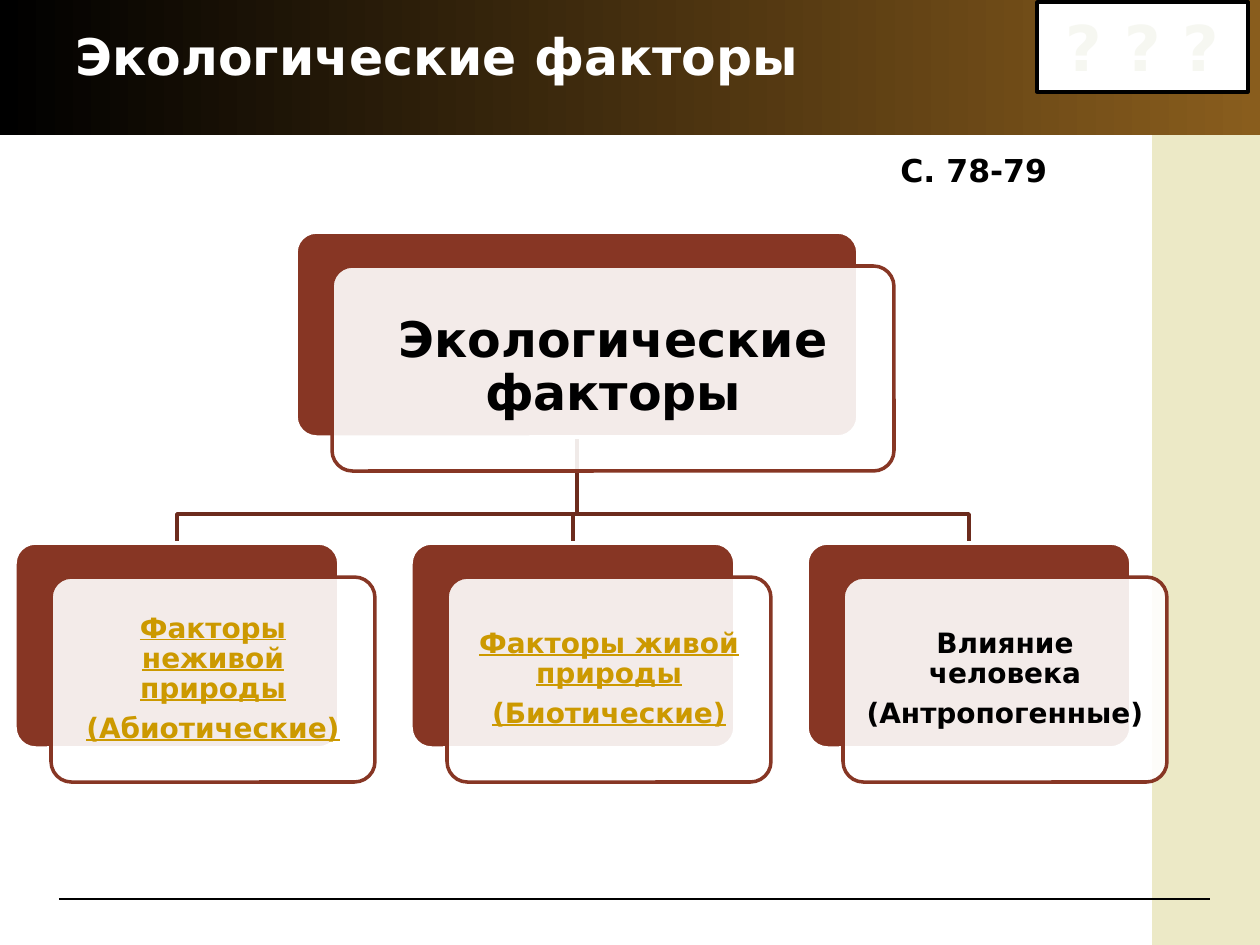
from dataclasses import dataclass

from lxml import etree
from pptx import Presentation
from pptx.dml.color import RGBColor
from pptx.enum.shapes import MSO_CONNECTOR, MSO_SHAPE
from pptx.enum.text import MSO_ANCHOR, PP_ALIGN
from pptx.oxml.ns import qn
from pptx.util import Emu, Pt

PX = 914400 / 126
RECT = MSO_SHAPE.RECTANGLE
ROUNDED = MSO_SHAPE.ROUNDED_RECTANGLE
STRAIGHT = MSO_CONNECTOR.STRAIGHT
CENTER, LEFT = PP_ALIGN.CENTER, PP_ALIGN.LEFT
MIDDLE, TOP = MSO_ANCHOR.MIDDLE, MSO_ANCHOR.TOP

COLORS = {
    "black": "000000",
    "white": "FFFFFF",
    "sand": "ECE9C6",
    "bronze": "895D1D",
    "brick": "873624",
    "branch": "6C2B1D",
    "gold": "CC9900",
    "pale": "F6F7F1",
}
SHADOW_OFFSET = (36, 34)
TRUNK_X, FORK_Y = 577, 514
CHILD_LEFT, CHILD_TOP, CHILD_STEP = 15, 543, 396
CARD_HEIGHT = 205


@dataclass(frozen=True)
class Box:
    left: int
    top: int
    width: int
    height: int

    def emu(self) -> list[Emu]:
        return [px(n) for n in (self.left, self.top, self.width, self.height)]


@dataclass(frozen=True)
class Factor:
    box: Box
    lines: tuple[str, ...]
    size: int
    inset: int
    color: str = "black"
    underline: bool = False


def px(length: int) -> Emu:
    return Emu(round(length * PX))


def rgb(name: str) -> RGBColor:
    return RGBColor.from_string(COLORS[name])


def add_panel(shapes, kind, box: Box, fill: str, line: str | None = None):
    panel = shapes.add_shape(kind, *box.emu())
    panel.shadow.inherit = False
    panel.fill.solid()
    panel.fill.fore_color.rgb = rgb(fill)
    if line:
        panel.line.color.rgb = rgb(line)
        panel.line.width = Pt(2)
    else:
        panel.line.fill.background()
    return panel


def write(frame, lines: tuple[str, ...], size: float, color: str,
          align=CENTER, anchor=MIDDLE, underline: bool = False) -> None:
    frame.word_wrap = True
    frame.vertical_anchor = anchor
    frame.text = "\n".join(lines)
    style = {"name": "DejaVu Sans", "size": Pt(size), "bold": True,
             "underline": underline}
    for paragraph in frame.paragraphs:
        paragraph.alignment = align
        for run in paragraph.runs:
            for attribute, value in style.items():
                setattr(run.font, attribute, value)
            run.font.color.rgb = rgb(color)


def add_factor(shapes, factor: Factor) -> None:
    box = factor.box
    dx, dy = SHADOW_OFFSET
    front = Box(box.left + dx, box.top + dy, box.width, box.height)
    backing = add_panel(shapes, ROUNDED, box, "brick", "white")
    card = add_panel(shapes, ROUNDED, front, "white", "brick")
    for panel in (backing, card):
        panel.adjustments[0] = 0.1
    tint = card.fill._xPr.find(qn("a:solidFill"))[0]
    etree.SubElement(tint, qn("a:alpha"), val="90000")
    frame = card.text_frame
    for side in ("left", "top", "right", "bottom"):
        setattr(frame, f"margin_{side}", px(factor.inset))
    write(frame, factor.lines, factor.size, factor.color,
          underline=factor.underline)
    for paragraph in frame.paragraphs:
        paragraph.line_spacing = 0.9
        paragraph.space_after = Pt(round(factor.size * 0.35, 1))


def add_branch(shapes, parent: Box, child: Box) -> None:
    child_x = child.left + child.width // 2
    builder = shapes.build_freeform(TRUNK_X, parent.top + parent.height, scale=PX)
    builder.add_line_segments(
        [(TRUNK_X, FORK_Y), (child_x, FORK_Y), (child_x, child.top)], close=False)
    branch = builder.convert_to_shape()
    branch.shadow.inherit = False
    branch.fill.background()
    branch.line.color.rgb = rgb("branch")
    branch.line.width = Pt(2)


def add_backdrop(shapes) -> None:
    add_panel(shapes, RECT, Box(1152, 135, 108, 810), "sand")
    rule = shapes.add_connector(STRAIGHT, px(59), px(899), px(1210), px(899))
    rule.line.color.rgb = rgb("black")
    rule.line.width = Pt(0.75)
    etree.SubElement(rule._element.spPr, qn("a:effectLst"))
    header = add_panel(shapes, RECT, Box(0, 0, 1260, 135), "black")
    header.fill.gradient()
    header.fill.gradient_angle = 0
    for stop, color in zip(header.fill.gradient_stops, ("black", "bronze")):
        stop.color.rgb = rgb(color)


def add_title(shapes) -> None:
    title = shapes.title
    shapes._spTree.append(title._element)
    title.left, title.top, title.width, title.height = Box(63, 16, 850, 78).emu()
    write(title.text_frame, ("Экологические факторы",), 28.8, "white", LEFT)


def child_box(column: int) -> Box:
    return Box(CHILD_LEFT + column * CHILD_STEP, CHILD_TOP, 324, CARD_HEIGHT)


def main() -> None:
    deck = Presentation()
    deck.slide_width, deck.slide_height = px(1260), px(945)
    shapes = deck.slides.add_slide(deck.slide_layouts[5]).shapes

    add_backdrop(shapes)
    add_title(shapes)

    root = Factor(Box(296, 232, 562, CARD_HEIGHT), ("Экологические факторы",), 28, 15)
    children = (
        Factor(child_box(0), ("Факторы неживой природы", "(Абиотические)"),
               16, 9, "gold", True),
        Factor(child_box(1), ("Факторы живой природы", "(Биотические)"),
               16, 9, "gold", True),
        Factor(child_box(2), ("Влияние человека", "(Антропогенные)"), 16, 9),
    )
    for child in reversed(children):
        add_branch(shapes, root.box, child.box)
    for factor in (root, *children):
        add_factor(shapes, factor)

    pages = shapes.add_textbox(*Box(888, 145, 248, 50).emu())
    write(pages.text_frame, ("С. 78-79",), 18, "black", LEFT, TOP)

    questions = add_panel(shapes, RECT, Box(1037, 2, 211, 90), "white", "black")
    write(questions.text_frame, ("? ? ?",), 36, "pale", anchor=TOP)

    deck.save("out.pptx")


if __name__ == "__main__":
    main()
